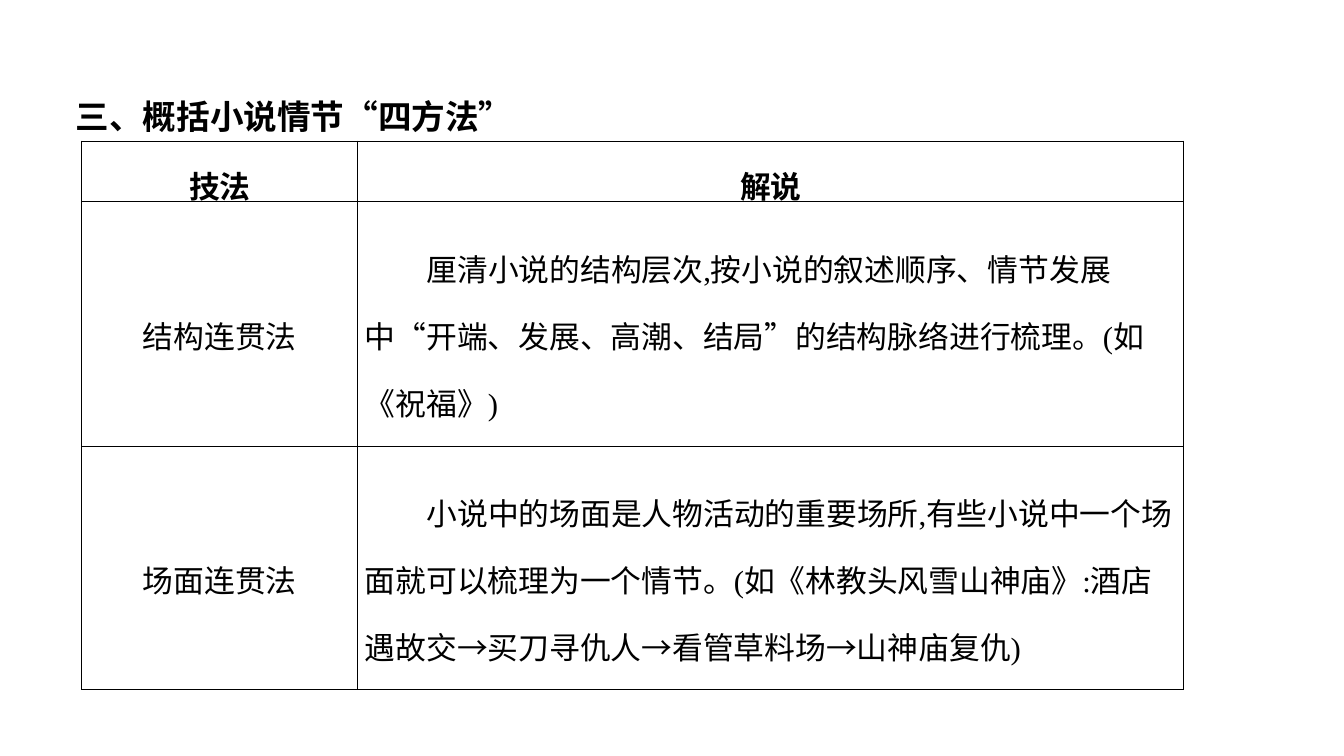
import pptx
import pptx.dml.color
import pptx.enum.lang
import pptx.enum.text
import pptx.oxml
import pptx.oxml.ns
import pptx.util

HEADING = "三、概括小说情节“四方法”"
METHODS = [
    ("技法", "解说"),
    ("结构连贯法",
     "厘清小说的结构层次,按小说的叙述顺序、情节发展中“开端、发展、高潮、结局”的结构脉络进行梳理。(如《祝福》)"),
    ("场面连贯法",
     "小说中的场面是人物活动的重要场所,有些小说中一个场面就可以梳理为一个情节。"
     "(如《林教头风雪山神庙》:酒店遇故交→买刀寻仇人→看管草料场→山神庙复仇)"),
]

SLIDE_SIZE = (13.33, 7.5)
HEADING_BOX = (0.65, 0.9, 5.56, 0.5)
TABLE_CORNER = (0.81, 1.4)
COLUMNS = (2.74, 8.19)
ROWS = (0.6, 2.43, 2.41)
SIDE_MARGINS = (0, 0.07)
INK = "000000"
HEADING_SIZE, BODY_SIZE = 24, 22
BORDER_WIDTH = 1

Inches, Pt = pptx.util.Inches, pptx.util.Pt
Align = pptx.enum.text.PP_ALIGN
Anchor = pptx.enum.text.MSO_ANCHOR


def rgb(value):
    return pptx.dml.color.RGBColor.from_string(value)


def apply(target, formats):
    for attribute, value in formats.items():
        setattr(target, attribute, value)


def style_font(font, size, bold):
    apply(font, {
        "name": "Times New Roman", "size": Pt(size), "bold": bold,
        "language_id": pptx.enum.lang.MSO_LANGUAGE_ID.SIMPLIFIED_CHINESE,
    })
    font.color.rgb = rgb(INK)


def add_borders(cell):
    """Draw all four edges; they must precede the fill in the cell properties."""
    properties = cell._tc.get_or_add_tcPr()
    for position, edge in enumerate(("lnL", "lnR", "lnT", "lnB")):
        properties.insert(position, pptx.oxml.parse_xml(
            f'<a:{edge} {pptx.oxml.ns.nsdecls("a")} w="{Pt(BORDER_WIDTH)}">'
            f'<a:solidFill><a:srgbClr val="{INK}"/></a:solidFill></a:{edge}>'))


def fill_cell(cell, words, is_header, column):
    is_explanation = column == 1 and not is_header
    margin = Inches(SIDE_MARGINS[column])
    apply(cell, {
        "text": words, "vertical_anchor": Anchor.MIDDLE,
        "margin_left": margin, "margin_right": margin,
        "margin_top": 0, "margin_bottom": 0,
    })
    cell.fill.background()
    add_borders(cell)
    paragraph = cell.text_frame.paragraphs[0]
    apply(paragraph, {
        "alignment": Align.LEFT if is_explanation else Align.CENTER,
        "line_spacing": 1.5,
    })
    if is_explanation:  # first line set in by two characters
        layout = paragraph._p.get_or_add_pPr()
        layout.set("marL", "0")
        layout.set("indent", str(Pt(2 * BODY_SIZE)))
    style_font(paragraph.runs[0].font, BODY_SIZE, is_header)


def add_heading(slide):
    heading = slide.shapes.title
    left, top, width, height = map(Inches, HEADING_BOX)
    apply(heading, {"left": left, "top": top, "width": width, "height": height})
    apply(heading.text_frame, {
        "text": HEADING, "word_wrap": True, "vertical_anchor": Anchor.TOP,
        "auto_size": pptx.enum.text.MSO_AUTO_SIZE.SHAPE_TO_FIT_TEXT,
    })
    paragraph = heading.text_frame.paragraphs[0]
    paragraph.alignment = Align.LEFT
    style_font(paragraph.runs[0].font, HEADING_SIZE, True)


def add_methods(slide):
    extent = (sum(COLUMNS), sum(ROWS))
    table = slide.shapes.add_table(
        len(ROWS), len(COLUMNS), *map(Inches, TABLE_CORNER + extent)).table
    apply(table, {"first_row": False, "horz_banding": False})
    for column, width in zip(table.columns, COLUMNS):
        column.width = Inches(width)
    for row, height in zip(table.rows, ROWS):
        row.height = Inches(height)
    for row, method in enumerate(METHODS):
        for column, words in enumerate(method):
            fill_cell(table.cell(row, column), words, row == 0, column)


def main():
    deck = pptx.Presentation()
    deck.slide_width, deck.slide_height = map(Inches, SLIDE_SIZE)
    slide = deck.slides.add_slide(deck.slide_layouts.get_by_name("Title Only"))
    add_heading(slide)
    add_methods(slide)
    deck.save("out.pptx")


if __name__ == "__main__":
    main()
